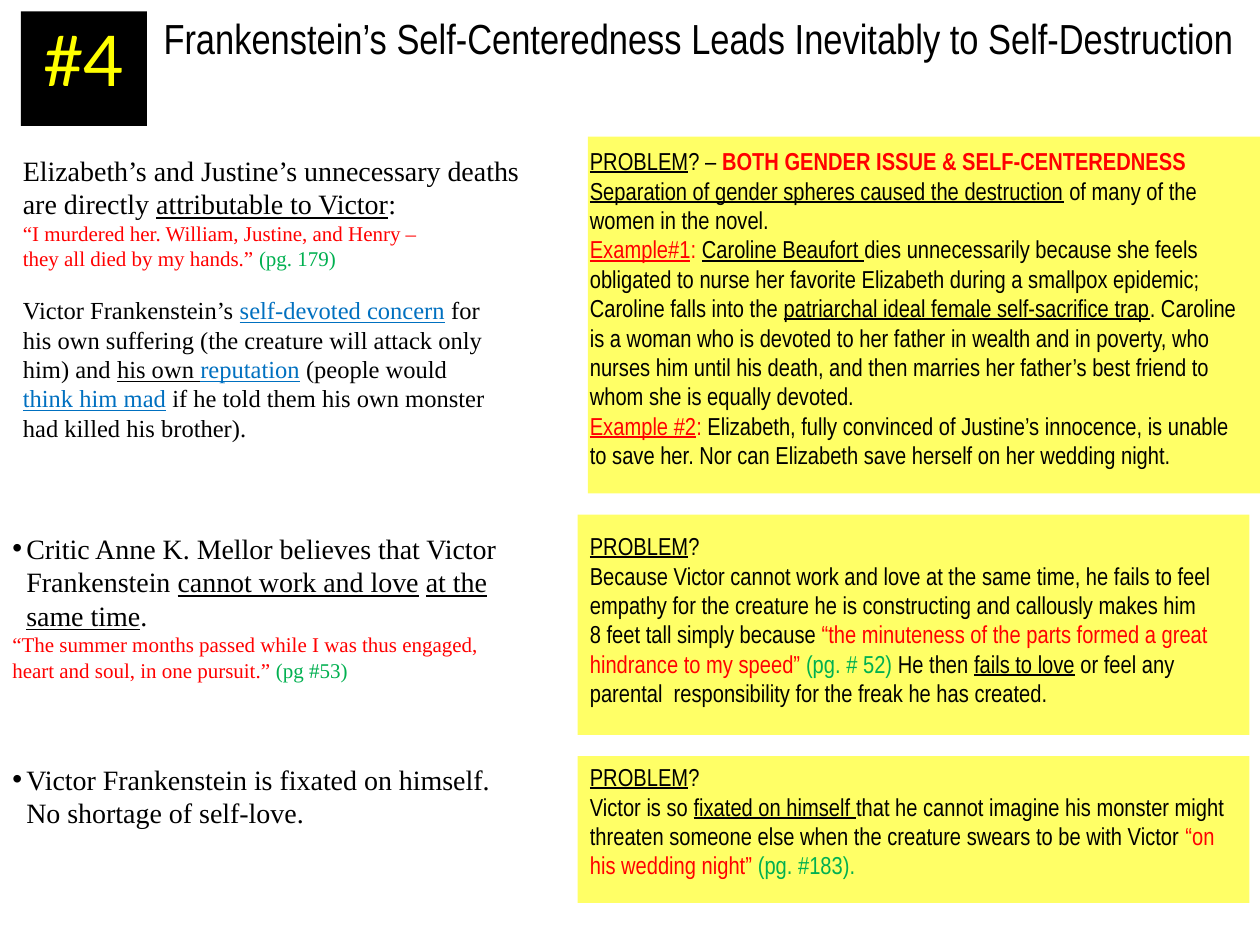
from pptx import Presentation
from pptx.dml.color import RGBColor
from pptx.enum.shapes import MSO_SHAPE
from pptx.enum.text import PP_ALIGN
from pptx.util import Pt
from lxml import etree

RECTANGLE = MSO_SHAPE.RECTANGLE
CENTER = PP_ALIGN.CENTER
DRAWING = "{http://schemas.openxmlformats.org/drawingml/2006/main}"
SANS, SERIF = "Arial Narrow", "Times New Roman"
BLACK, YELLOW, PANEL = "000000", "FFFF00", "FFFF66"
RED, GREEN, BLUE = "FF0000", "00B050", "0070C0"
UNDERLINE, BOLD = "underline", "bold"


def add_rectangle(shapes, left, top, width, height, fill):
    shape = shapes.add_shape(RECTANGLE, Pt(left), Pt(top), Pt(width), Pt(height))
    shape.shadow.inherit = False
    shape.fill.solid()
    shape.fill.fore_color.rgb = RGBColor.from_string(fill)
    shape.line.fill.background()


def add_text(shapes, box, font, lines, color=BLACK):
    """Each line is (size, segment, ...); a segment is text or (text, *styles and colour)."""
    text_frame = shapes.add_textbox(*[Pt(length) for length in box]).text_frame
    text_frame.word_wrap = True
    for index, (size, *segments) in enumerate(lines):
        paragraph = text_frame.paragraphs[0] if index == 0 else text_frame.add_paragraph()
        for segment in segments:
            text, *styles = (segment,) if isinstance(segment, str) else segment
            run = paragraph.add_run()
            run.text = text
            run.font.name = font
            run.font.size = Pt(size)
            run.font.underline = UNDERLINE in styles
            run.font.bold = BOLD in styles
            colors = [style for style in styles if style not in (UNDERLINE, BOLD)]
            run.font.color.rgb = RGBColor.from_string(colors[0] if colors else color)
    return text_frame


presentation = Presentation()
presentation.slide_width, presentation.slide_height = Pt(720), Pt(540)
slide = presentation.slides.add_slide(presentation.slide_layouts[6])
shapes = slide.shapes

# Heading and number badge
add_text(shapes, (86.4, 3.6, 633.6, 45), SANS, [
    (24, "Frankenstein’s Self-Centeredness Leads Inevitably to Self-Destruction"),
])
badge = shapes.add_group_shape().shapes
add_rectangle(badge, 12, 6.5, 72, 65.5, BLACK)
number = add_text(badge, (0, 6, 96, 78), "Lato", [(40, "#4")], YELLOW)
number.paragraphs[0].alignment = CENTER

# Problem panels on the right
problem = ("PROBLEM", UNDERLINE)
problem_panels = [
    ((336, 78, 384, 204), (330, 80, 390, 194), [
        [problem, "? – ", ("BOTH GENDER ISSUE & SELF-CENTEREDNESS", BOLD, RED)],
        [("Separation of gender spheres caused the destruction", UNDERLINE), " of many of the"],
        ["women in the novel."],
        [("Example#1", UNDERLINE, RED), (": ", RED), ("Caroline Beaufort ", UNDERLINE),
         "dies unnecessarily because she feels"],
        ["obligated to nurse her favorite Elizabeth during a smallpox epidemic;"],
        ["Caroline falls into the ", ("patriarchal ideal female self-sacrifice trap", UNDERLINE),
         ". Caroline"],
        ["is a woman who is devoted to her father in wealth and in poverty, who"],
        ["nurses him until his death, and then marries her father’s best friend to"],
        ["whom she is equally devoted."],
        [("Example #2", UNDERLINE, RED), (": ", RED),
         "Elizabeth, fully convinced of Justine’s innocence, is unable"],
        ["to save her. Nor can Elizabeth save herself on her wedding night."],
    ]),
    ((330, 294, 384, 126), (330, 300, 390, 143), [
        [problem, "?"],
        ["Because Victor cannot work and love at the same time, he fails to feel"],
        ["empathy for the creature he is constructing and callously makes him"],
        ["8 feet tall simply because ", ("“the minuteness of the parts formed a great", RED)],
        [("hindrance to my speed”", RED), (" (pg. # 52) ", GREEN), "He then ",
         ("fails to love", UNDERLINE), " or feel any"],
        ["parental  responsibility for the freak he has created."],
    ]),
    ((330, 432, 384, 84), (330, 432, 390, 75), [
        [problem, "?"],
        ["Victor is so ", ("fixated on himself ", UNDERLINE),
         "that he cannot imagine his monster might"],
        ["threaten someone else when the creature swears to be with Victor ", ("“on", RED)],
        [("his wedding night” ", RED), ("(pg. #183).", GREEN)],
    ]),
]
for panel, text_box, lines in problem_panels:
    add_rectangle(shapes, *panel, PANEL)
    add_text(shapes, text_box, SANS, [(14, *line) for line in lines])

# Evidence on the left
deaths = add_text(shapes, (6, 84, 360, 174), SERIF, [
    (16, "Elizabeth’s and Justine’s unnecessary deaths"),
    (16, "are directly ", ("attributable to Victor", UNDERLINE), ":"),
    (12, ("“I murdered her. William, Justine, and Henry –", RED)),
    (12, ("they all died by my hands.” ", RED), ("(pg. 179)", GREEN)),
    (14, "Victor Frankenstein’s ", ("self-devoted concern", UNDERLINE, BLUE), " for"),
    (14, "his own suffering (the creature will attack only"),
    (14, "him) and ", ("his own ", UNDERLINE), ("reputation", UNDERLINE, BLUE), " (people would"),
    (14, ("think him mad", UNDERLINE, BLUE), " if he told them his own monster"),
    (14, "had killed his brother)."),
])
deaths.paragraphs[4].space_before = Pt(14)

critic = add_text(shapes, (0, 300, 297, 94), SERIF, [
    (16, "Critic Anne K. Mellor believes that Victor"),
    (16, "Frankenstein ", ("cannot work and love", UNDERLINE), " ", ("at the", UNDERLINE)),
    (16, ("same time", UNDERLINE), "."),
    (12, ("“The summer months passed while I was thus engaged,", RED)),
    (12, ("heart and soul, in one pursuit.” ", RED), ("(pg #53)", GREEN)),
])
fixation = add_text(shapes, (0, 432, 293, 46), SERIF, [
    (16, "Victor Frankenstein is fixated on himself."),
    (16, "No shortage of self-love."),
])
for text_frame, indented_lines in ((critic, 3), (fixation, 2)):
    text_frame.word_wrap = False
    for index, paragraph in enumerate(text_frame.paragraphs[:indented_lines]):
        properties = paragraph._p.get_or_add_pPr()
        properties.set("marL", str(Pt(8)))
        if index == 0:
            properties.set("indent", str(-Pt(8)))
            etree.SubElement(properties, DRAWING + "buFont", typeface="Arial")
            etree.SubElement(properties, DRAWING + "buChar", char="•")

presentation.save("out.pptx")
